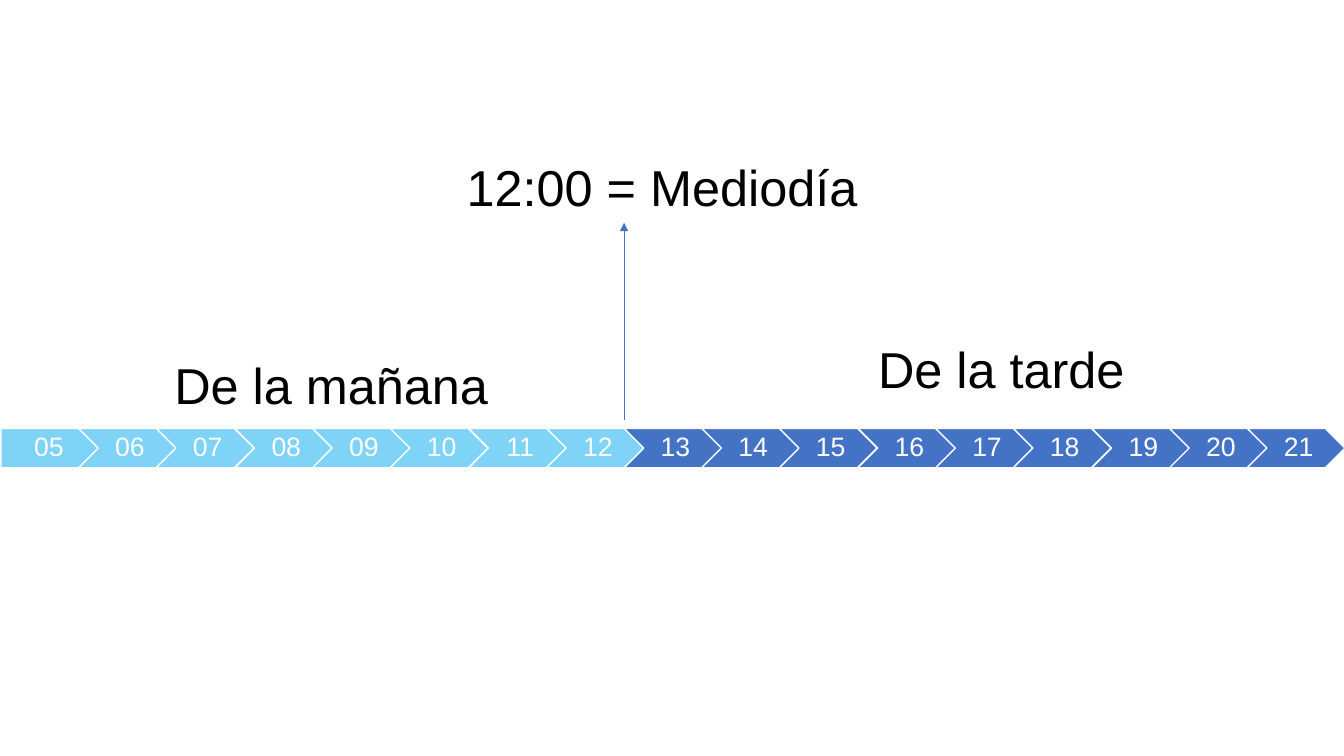
import pptx
import pptx.util
import pptx.dml.color
import pptx.enum.shapes
import pptx.enum.text
import pptx.oxml
import pptx.oxml.ns

PX = 9144  # 100 px to the inch
COLORS = {"morning": "7ED3F7", "afternoon": "4472C4", "white": "FFFFFF", "black": "000000"}
SHAPE = pptx.enum.shapes.MSO_SHAPE


def rgb(name):
    return pptx.dml.color.RGBColor.from_string(COLORS[name])


def write(sp, text, size, color, frame, para):
    tf = sp.text_frame
    for key, value in frame.items():
        setattr(tf, key, value)
    p = tf.paragraphs[0]
    for key, value in para.items():
        setattr(p, key, value)
    r = p.add_run()
    r.text = text
    for key, value in {"name": "Arial", "size": pptx.util.Pt(size)}.items():
        setattr(r.font, key, value)
    r.font.color.rgb = rgb(color)


prs = pptx.Presentation()
prs.slide_width, prs.slide_height = 1333 * PX, 750 * PX
s = prs.slides.add_slide(prs.slide_layouts[6])

# Timeline of hours
FIRST, NOON, LAST = 5, 12, 21
timeline = s.shapes.add_group_shape()
for hour in range(FIRST, LAST + 1):
    i = hour - FIRST
    kind = SHAPE.CHEVRON if i else SHAPE.PENTAGON
    left = 1 + round(i * 1236 / (LAST - FIRST))
    sp = timeline.shapes.add_shape(kind, left * PX, 425 * PX, 97 * PX, 39 * PX)
    sp.shadow.inherit = False
    sp.fill.solid()
    sp.fill.fore_color.rgb = rgb("morning" if hour <= NOON else "afternoon")
    sp.line.color.rgb = rgb("white")
    sp.line.width = pptx.util.Pt(1)
    frame = {
        "margin_left": (8 if i else 11) * PX,
        "margin_right": 3 * PX,
        "margin_top": 6 * PX,
        "margin_bottom": 6 * PX,
        "vertical_anchor": pptx.enum.text.MSO_ANCHOR.MIDDLE,
        "word_wrap": True,
    }
    para = {"alignment": pptx.enum.text.PP_ALIGN.CENTER, "line_spacing": 0.9}
    write(sp, f"{hour:02d}", 19, "white", frame, para)

# Arrow up to noon
arrow = s.shapes.add_connector(
    pptx.enum.shapes.MSO_CONNECTOR.STRAIGHT, 619 * PX, 417 * PX, 619 * PX, 221 * PX)
arrow.line.color.rgb = rgb("afternoon")
arrow.line.width = pptx.util.Pt(0.5)
ln = arrow.line._get_or_add_ln()
ln.append(pptx.oxml.parse_xml(f'<a:tailEnd {pptx.oxml.ns.nsdecls("a")} type="triangle"/>'))
arrow._element.spPr.append(pptx.oxml.parse_xml(f'<a:effectLst {pptx.oxml.ns.nsdecls("a")}/>'))

# Labels
LABELS = [
    ("De la mañana", 163, 346, 381),
    ("De la tarde", 861, 331, 278),
    ("12:00 = Mediodía", 453, 150, 427),
]
for text, left, top, width in LABELS:
    sp = s.shapes.add_textbox(left * PX, top * PX, width * PX, 71 * PX)
    frame = {"word_wrap": True, "auto_size": pptx.enum.text.MSO_AUTO_SIZE.SHAPE_TO_FIT_TEXT}
    write(sp, text, 36, "black", frame, {})

prs.save("out.pptx")
